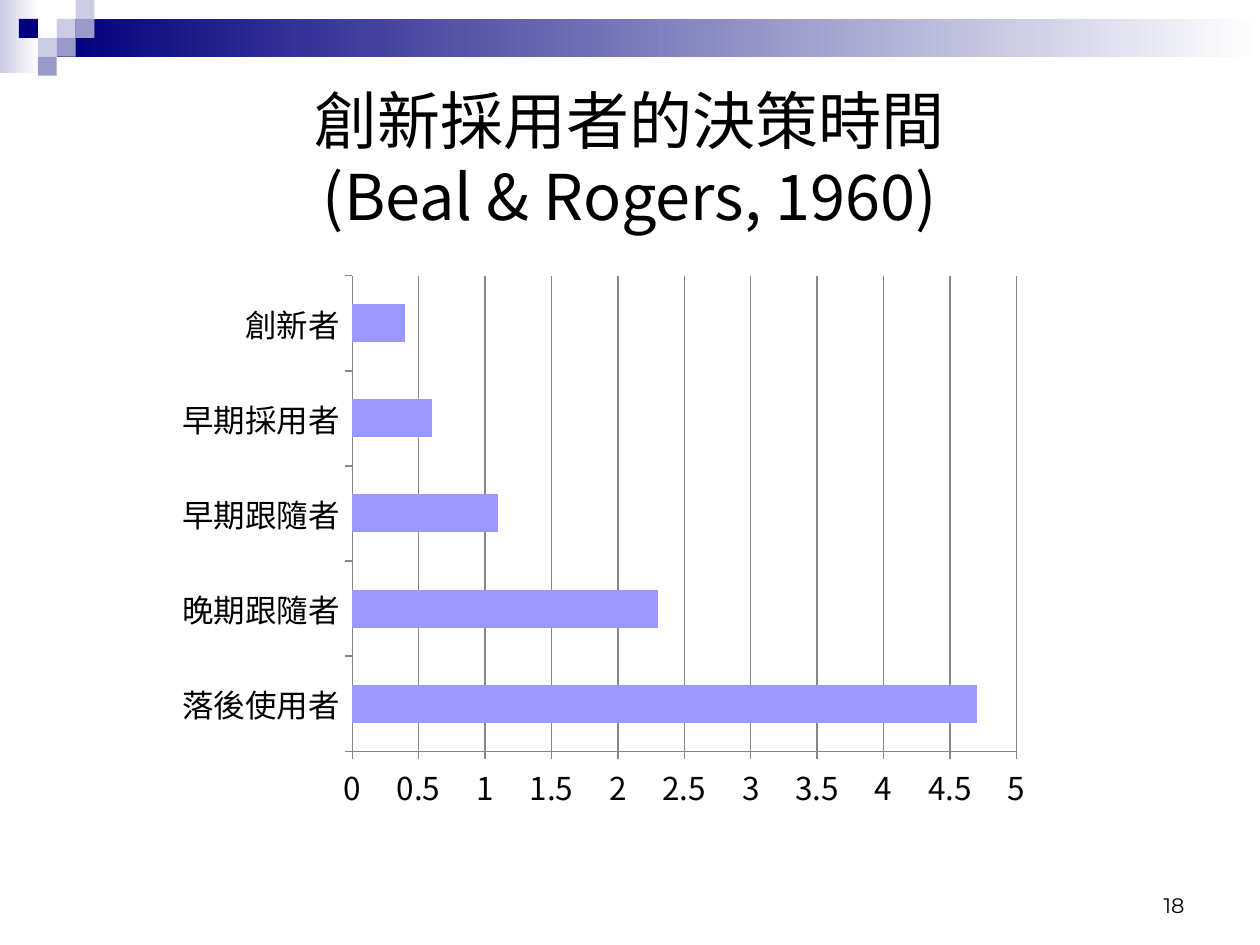
from dataclasses import dataclass

from lxml import etree
from pptx import Presentation
from pptx.chart.data import CategoryChartData
from pptx.dml.color import RGBColor
from pptx.enum.chart import XL_CHART_TYPE, XL_TICK_MARK
from pptx.enum.shapes import MSO_SHAPE
from pptx.enum.text import MSO_ANCHOR, PP_ALIGN
from pptx.oxml import parse_xml
from pptx.oxml.ns import nsdecls, qn
from pptx.shapes.autoshape import Shape
from pptx.slide import Slide
from pptx.text.text import Font
from pptx.util import Pt

BAR_CLUSTERED = XL_CHART_TYPE.BAR_CLUSTERED
TICK_OUTSIDE = XL_TICK_MARK.OUTSIDE
RECTANGLE = MSO_SHAPE.RECTANGLE
MIDDLE, BOTTOM = MSO_ANCHOR.MIDDLE, MSO_ANCHOR.BOTTOM
CENTER, RIGHT = PP_ALIGN.CENTER, PP_ALIGN.RIGHT

WHITE = RGBColor(0xFF, 0xFF, 0xFF)
BLACK = RGBColor(0x00, 0x00, 0x00)
NAVY = RGBColor(0x00, 0x00, 0x7D)
LAVENDER = RGBColor(0xCC, 0xCC, 0xE6)
VIOLET = RGBColor(0x99, 0x99, 0xCC)
BAR_BLUE = RGBColor(0x99, 0x99, 0xFF)
AXIS_GRAY = RGBColor(0x87, 0x87, 0x87)

CJK_FONT = "Noto Sans CJK SC"
NUMBER_FONT = "Montserrat"
TILE = 10.8


@dataclass(frozen=True)
class Frame:
    left: float
    top: float
    width: float
    height: float

    def lengths(self) -> tuple[Pt, Pt, Pt, Pt]:
        return Pt(self.left), Pt(self.top), Pt(self.width), Pt(self.height)


@dataclass(frozen=True)
class Band:
    frame: Frame
    start: RGBColor


@dataclass(frozen=True)
class Tile:
    column: int
    row: int
    color: RGBColor


@dataclass(frozen=True)
class Label:
    frame: Frame
    lines: tuple[str, ...]
    font: str
    size: float
    align: PP_ALIGN
    anchor: MSO_ANCHOR


BANDS = (
    Band(Frame(0, 0, 22.3, 41.8), LAVENDER),
    Band(Frame(32.4, TILE, 687.6, 21.6), NAVY),
)
TILES = (
    Tile(3, 1, LAVENDER),
    Tile(4, 0, LAVENDER),
    Tile(4, 1, VIOLET),
    Tile(2, 2, LAVENDER),
    Tile(1, 1, NAVY),
    Tile(3, 2, VIOLET),
    Tile(2, 3, VIOLET),
)
LABELS = (
    Label(Frame(36, 36, 648, 108), ("創新採用者的決策時間", "(Beal & Rogers, 1960)"),
          CJK_FONT, 36, CENTER, MIDDLE),
    Label(Frame(516, 492, 168, 36), ("18",), NUMBER_FONT, 12, RIGHT, BOTTOM),
)
CHART_FRAME = Frame(93.6, 151.2, 566.6, 319.7)
PLOT_SHARE = {"x": 0.19, "y": 0.02, "w": 0.67, "h": 0.85}
DECISION_YEARS = {
    "落後使用者": 4.7,
    "晚期跟隨者": 2.3,
    "早期跟隨者": 1.1,
    "早期採用者": 0.6,
    "創新者": 0.4,
}


def style_font(font: Font, name: str, size: float) -> None:
    font.name = name
    font.size = Pt(size)
    font.color.rgb = BLACK


def add_rectangle(page: Slide, frame: Frame) -> Shape:
    box = page.shapes.add_shape(RECTANGLE, *frame.lengths())
    box.shadow.inherit = False
    box.line.fill.background()
    return box


def add_band(page: Slide, band: Band) -> None:
    fill = add_rectangle(page, band.frame).fill
    fill.gradient()
    fill.gradient_angle = 0
    for stop, color in zip(fill.gradient_stops, (band.start, WHITE)):
        stop.color.rgb = color


def add_tile(page: Slide, tile: Tile) -> None:
    frame = Frame(tile.column * TILE, tile.row * TILE, TILE, TILE)
    fill = add_rectangle(page, frame).fill
    fill.solid()
    fill.fore_color.rgb = tile.color


def add_label(page: Slide, label: Label) -> None:
    box = page.shapes.add_textbox(*label.frame.lengths())
    text = box.text_frame
    text.word_wrap = True
    text.vertical_anchor = label.anchor
    para = text.paragraphs[0]
    para.alignment = label.align
    for index, line in enumerate(label.lines):
        if index:
            para.add_line_break()
        span = para.add_run()
        span.text = line
        style_font(span.font, label.font, label.size)
        east_asian = etree.SubElement(span.font._element, qn("a:ea"))
        east_asian.set("typeface", label.font)


def add_decision_chart(page: Slide) -> None:
    data = CategoryChartData()
    data.categories = list(DECISION_YEARS)
    data.add_series("", list(DECISION_YEARS.values()))
    chart = page.shapes.add_chart(BAR_CLUSTERED, *CHART_FRAME.lengths(), data).chart
    chart.has_title = False
    chart.has_legend = False
    style_font(chart.font, CJK_FONT, 18)
    for properties in chart._chartSpace.iter(qn("a:defRPr")):
        latin = properties.find(qn("a:latin"))
        if latin is not None:
            east_asian = etree.Element(qn("a:ea"), typeface=CJK_FONT)
            latin.addnext(east_asian)

    plot = chart.plots[0]
    plot.gap_width = 150
    plot.vary_by_categories = False
    fill = plot.series[0].format.fill
    fill.solid()
    fill.fore_color.rgb = BAR_BLUE

    values = chart.value_axis
    values.minimum_scale = 0
    values.maximum_scale = 5
    values.major_unit = 0.5
    values.has_major_gridlines = True
    values.tick_labels.number_format = "General"
    values.tick_labels.number_format_is_linked = False
    for axis in (values, chart.category_axis):
        axis.major_tick_mark = TICK_OUTSIDE
    for part in (values, chart.category_axis, values.major_gridlines):
        part.format.line.color.rgb = AXIS_GRAY
        part.format.line.width = Pt(0.75)

    area = chart._chartSpace.chart.plotArea
    for layout in area.findall(qn("c:layout")):
        area.remove(layout)
    modes = "".join(f'<c:{side}Mode val="edge"/>' for side in "xy")
    shares = "".join(f'<c:{side} val="{share}"/>' for side, share in PLOT_SHARE.items())
    area.insert(0, parse_xml(
        f'<c:layout {nsdecls("c")}><c:manualLayout><c:layoutTarget val="inner"/>'
        f'{modes}{shares}</c:manualLayout></c:layout>'))


def main() -> None:
    deck = Presentation()
    deck.slide_width, deck.slide_height = Pt(720), Pt(540)
    page = deck.slides.add_slide(deck.slide_layouts[6])
    for band in BANDS:
        add_band(page, band)
    for tile in TILES:
        add_tile(page, tile)
    for label in LABELS:
        add_label(page, label)
    add_decision_chart(page)
    deck.save("out.pptx")


if __name__ == "__main__":
    main()
